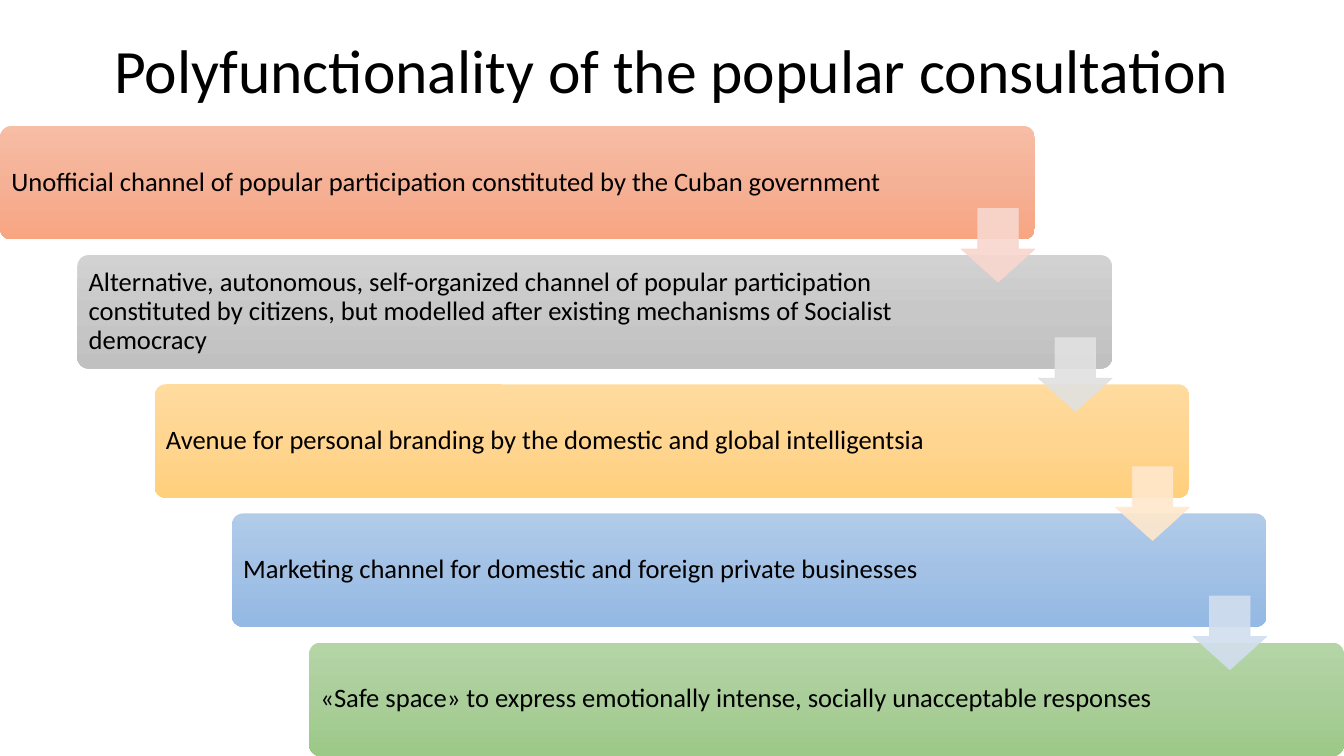
import pptx
import pptx.dml.color
import pptx.enum.shapes
import pptx.enum.text
import pptx.oxml.ns
import pptx.util
from lxml import etree

Pt = pptx.util.Pt
ALIGN = pptx.enum.text.PP_ALIGN
SHAPE = pptx.enum.shapes.MSO_SHAPE

# Box text, gradient from top to bottom, colour of the arrow to the next box
STEPS = [
    ("Unofficial channel of popular participation constituted by the Cuban government",
     ("F7BDA5", "F5B196", "F8A582"), "F8D7CE"),
    ("Alternative, autonomous, self-organized channel of popular participation "
     "constituted by citizens, but modelled after existing mechanisms of Socialist democracy",
     ("D2D2D2", "C8C8C8", "C0C0C0"), "E1E1E1"),
    ("Avenue for personal branding by the domestic and global intelligentsia",
     ("FFDB9E", "FFD590", "FFD07C"), "FFE8CC"),
    ("Marketing channel for domestic and foreign private businesses",
     ("B1CBE9", "A3C1E5", "93B9E4"), "D2DEEF"),
    ("«Safe space» to express emotionally intense, socially unacceptable responses",
     ("B5D5A7", "AACE9A", "9CC987"), None),
]

SLIDE_WIDTH, SLIDE_HEIGHT = 960, 540
BOX_WIDTH, BOX_HEIGHT, FIRST_TOP = 739.2, 81, 90
STEP_X = (SLIDE_WIDTH - BOX_WIDTH) / (len(STEPS) - 1)
STEP_Y = (SLIDE_HEIGHT - BOX_HEIGHT - FIRST_TOP) / (len(STEPS) - 1)
TEXT_MARGIN = 2.4
ARROW_SIZE, ARROW_DROP = 52.6, 59


def rgb(value):
    return pptx.dml.color.RGBColor.from_string(value)


def write_text(frame, text, size, align=ALIGN.LEFT, inset=5.76):
    frame.word_wrap = True
    frame.auto_size = pptx.enum.text.MSO_AUTO_SIZE.NONE
    frame.vertical_anchor = pptx.enum.text.MSO_ANCHOR.MIDDLE
    frame.margin_left = frame.margin_right = Pt(inset)
    frame.margin_top = frame.margin_bottom = Pt(inset)
    paragraph = frame.paragraphs[0]
    paragraph.alignment = align
    paragraph.line_spacing = 0.9
    run = paragraph.add_run()
    run.text = text
    run.font.name = "Calibri"
    run.font.size = Pt(size)
    run.font.color.rgb = rgb("000000")


class Cascade:
    """Draws the elements of the slide."""

    def __init__(self, slide):
        self.slide = slide

    def title(self, text):
        title = self.slide.shapes.title
        title.left, title.top, title.width, title.height = map(Pt, (66, 14.4, 828, 75.6))
        write_text(title.text_frame, text, 44, ALIGN.CENTER)

    def shape(self, kind, left, top, width, height, *adjustments):
        shape = self.slide.shapes.add_shape(kind, *map(Pt, (left, top, width, height)))
        shape.shadow.inherit = False
        for index, value in enumerate(adjustments):
            shape.adjustments[index] = value
        return shape

    def box(self, left, top, colours):
        shape = self.shape(SHAPE.ROUNDED_RECTANGLE, left, top, BOX_WIDTH, BOX_HEIGHT, 0.1)
        shape.line.fill.background()
        shape.fill.gradient()
        shape.fill.gradient_angle = 270
        qn = pptx.oxml.ns.qn
        stops = shape.element.spPr.find(".//" + qn("a:gsLst"))
        for stop in list(stops):
            stops.remove(stop)
        for index, colour in enumerate(colours):
            stop = etree.SubElement(stops, qn("a:gs"), pos=str(index * 50000))
            etree.SubElement(stop, qn("a:srgbClr"), val=colour)

    def label(self, left, top, width, height, text):
        shape = self.slide.shapes.add_textbox(*map(Pt, (left, top, width, height)))
        write_text(shape.text_frame, text, 19)

    def arrow(self, left, top, colour):
        shape = self.shape(SHAPE.DOWN_ARROW, left, top, ARROW_SIZE, ARROW_SIZE, 0.55, 0.45)
        shape.fill.solid()
        shape.fill.fore_color.rgb = rgb(colour)
        shape.line.color.rgb = rgb(colour)
        shape.line.width = Pt(0.5)
        qn = pptx.oxml.ns.qn
        for element in shape.element.spPr.iter(qn("a:srgbClr")):
            etree.SubElement(element, qn("a:alpha"), val="90000")


def main():
    presentation = pptx.Presentation()
    presentation.slide_width = Pt(SLIDE_WIDTH)
    presentation.slide_height = Pt(SLIDE_HEIGHT)
    cascade = Cascade(presentation.slides.add_slide(presentation.slide_layouts[5]))
    cascade.title("Polyfunctionality of the popular consultation")

    # Stepped boxes with their text
    for index, (text, colours, _) in enumerate(STEPS):
        left, top = index * STEP_X, FIRST_TOP + index * STEP_Y
        cascade.box(left, top, colours)
        cascade.label(left + TEXT_MARGIN, top + TEXT_MARGIN, 642 if index == 0 else 626.4,
                      BOX_HEIGHT - 2 * TEXT_MARGIN, text)

    # Arrows lie over the boxes they join
    for index, (_, _, colour) in enumerate(STEPS[:-1]):
        cascade.arrow(index * STEP_X + BOX_WIDTH - ARROW_SIZE,
                      FIRST_TOP + index * STEP_Y + ARROW_DROP, colour)

    presentation.save("out.pptx")


if __name__ == "__main__":
    main()
